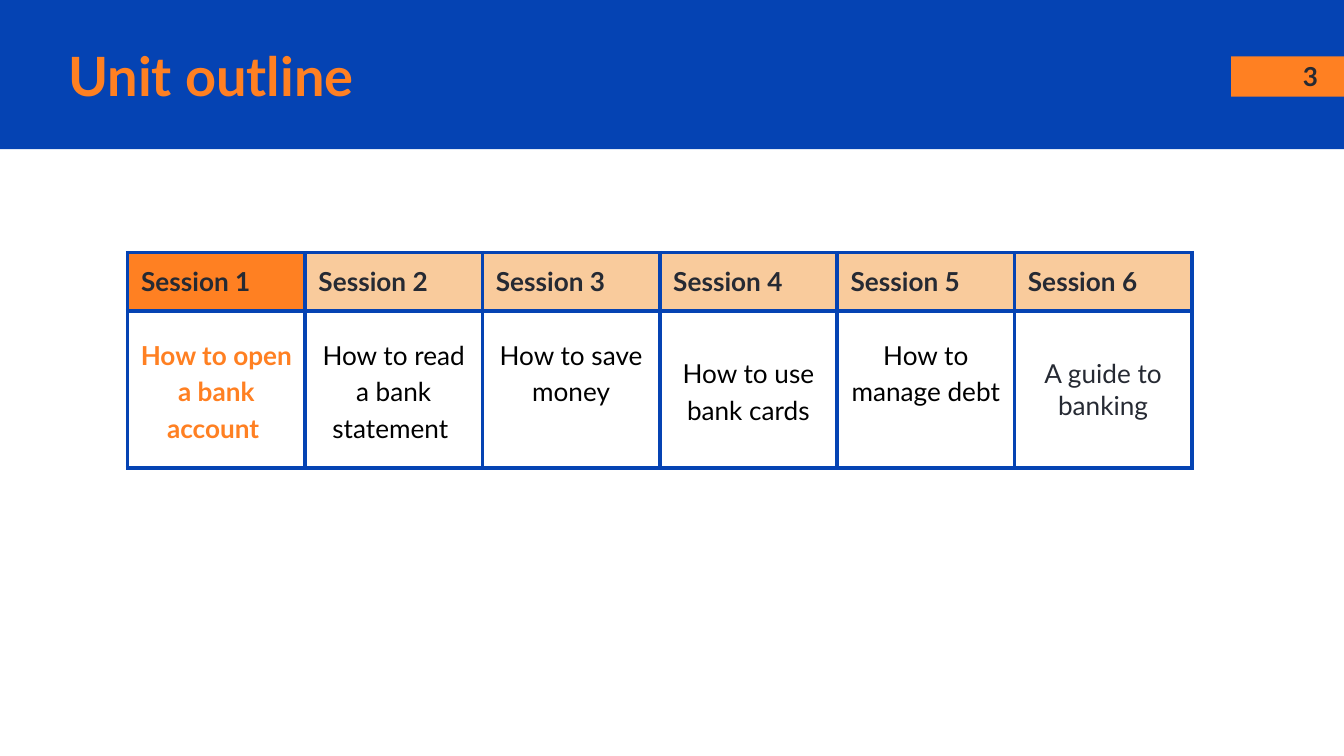
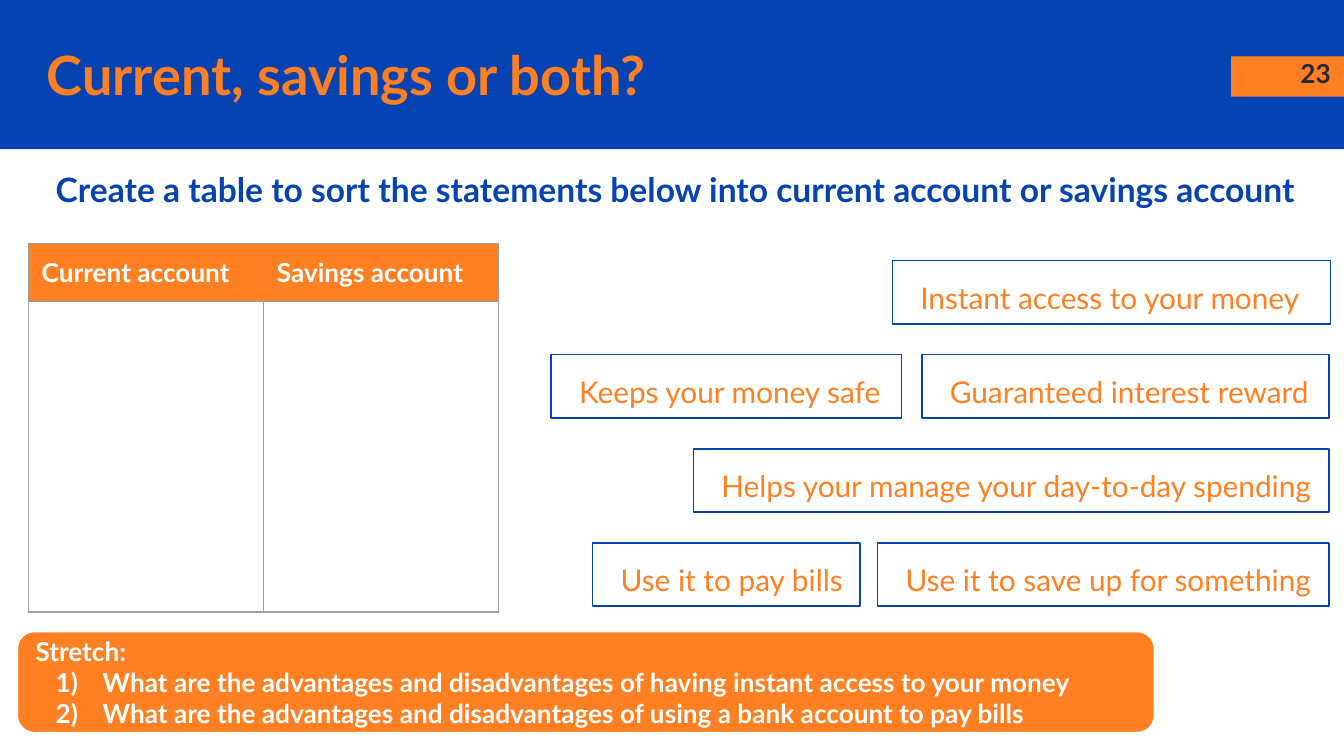
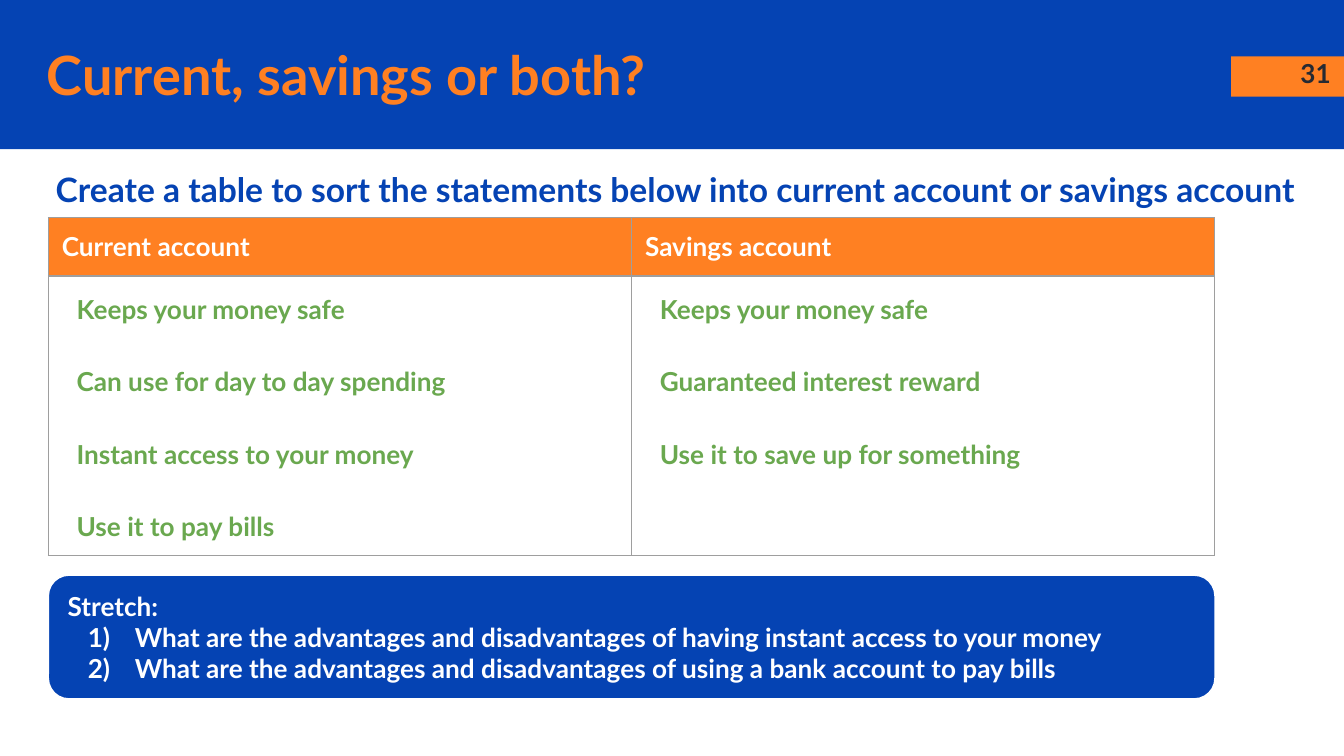
from lxml.etree import SubElement
from pptx import Presentation
from pptx.dml.color import RGBColor
from pptx.enum.shapes import MSO_SHAPE as Shape
from pptx.enum.text import MSO_ANCHOR as Anchor, PP_ALIGN as Align
from pptx.oxml.ns import qn
from pptx.util import Inches, Pt

COLORS = {
    "blue": "0543B3", "orange": "FF8022", "peach": "F9CB9C", "ink": "262A33",
    "black": "000000", "white": "FFFFFF", "gray": "9E9E9E", "green": "6AA84F",
}
FONT = "Lato"
ACCOUNTS = ["Current account", "Savings account"]
TASK = "Create a table to sort the statements below into current account or savings account"
STRETCH = [
    "Stretch:",
    "What are the advantages and disadvantages of having instant access to your money",
    "What are the advantages and disadvantages of using a bank account to pay bills",
]
SESSIONS = [
    "How to open a bank account ", "How to read a bank statement ", "How to save money",
    "How to use bank cards", "How to manage debt", "A guide to banking",
]
RAISED_SESSIONS = (2, 4)
STATEMENT_ROWS = [
    [("Instant access to your money", 6.64, 3.26)],
    [("Keeps your money safe", 4.1, 2.61), ("Guaranteed interest reward", 6.86, 3.03)],
    [("Helps your manage your day-to-day spending", 5.16, 4.73)],
    [("Use it to pay bills", 4.41, 1.99), ("Use it to save up for something", 6.53, 3.36)],
]
ANSWERS = [
    ["Keeps your money safe", "Can use for day to day spending",
     "Instant access to your money", "Use it to pay bills"],
    ["Keeps your money safe", "Guaranteed interest reward", "Use it to save up for something"],
]


def rgb(name):
    return RGBColor.from_string(COLORS[name])


def number_para(para, color):
    props = para._p.get_or_add_pPr()
    props.set("marL", str(Inches(0.5)))
    props.set("indent", str(Inches(-0.35)))
    bullet_color = SubElement(props, qn("a:buClr"))
    SubElement(bullet_color, qn("a:srgbClr"), val=COLORS[color])
    SubElement(props, qn("a:buAutoNum"), type="arabicParenR")


def write(frame, text, size=14, color="ink", bold=True, align=Align.LEFT,
          spacing=None, indent=0, gap=0, numbered=False):
    lines = [text] if isinstance(text, str) else text
    for index, line in enumerate(lines):
        para = frame.add_paragraph() if index else frame.paragraphs[0]
        if numbered and index:
            number_para(para, color)
        elif indent:
            para._p.get_or_add_pPr().set("marL", str(Inches(indent)))
        para.alignment = align
        if spacing:
            para.line_spacing = spacing
        if gap and index:
            para.space_before = Pt(gap)
        span = para.add_run()
        span.text = line
        span.font.name = FONT
        span.font.size = Pt(size)
        span.font.bold = bold
        span.font.color.rgb = rgb(color)


def set_margins(target, margin):
    target.margin_left = target.margin_right = Inches(margin)
    target.margin_top = target.margin_bottom = Inches(margin)


def prepare_frame(box, anchor):
    frame = box.text_frame
    frame.word_wrap = True
    frame.vertical_anchor = anchor
    set_margins(frame, 0.1)
    return frame


def add_text(page, place, text, anchor=Anchor.TOP, **style):
    box = page.shapes.add_textbox(*map(Inches, place))
    write(prepare_frame(box, anchor), text, **style)


def add_block(page, place, kind=Shape.RECTANGLE, fill=None, line=None,
              text=None, anchor=Anchor.TOP, **style):
    block = page.shapes.add_shape(kind, *map(Inches, place))
    block.shadow.inherit = False
    if fill:
        block.fill.solid()
        block.fill.fore_color.rgb = rgb(fill)
    else:
        block.fill.background()
    if line:
        block.line.color.rgb = rgb(line)
        block.line.width = Pt(0.75)
    else:
        block.line.fill.background()
    if text:
        write(prepare_frame(block, anchor), text, **style)


def style_cell(cell, border, width, fill=None, margin=0.1):
    props = cell._tc.get_or_add_tcPr()
    for side in ("a:lnL", "a:lnR", "a:lnT", "a:lnB"):
        edge = SubElement(props, qn(side), w=str(Pt(width)))
        paint = SubElement(edge, qn("a:solidFill"))
        SubElement(paint, qn("a:srgbClr"), val=COLORS[border])
    if fill:
        cell.fill.solid()
        cell.fill.fore_color.rgb = rgb(fill)
    else:
        cell.fill.background()
    set_margins(cell, margin)


def add_grid(page, left, top, column_width, row_heights, columns):
    width = column_width * columns
    frame = page.shapes.add_table(len(row_heights), columns, Inches(left), Inches(top),
                                  Inches(width), Inches(sum(row_heights)))
    table = frame.table
    table.first_row = table.horz_banding = False
    for column in table.columns:
        column.width = Inches(column_width)
    for row, height in zip(table.rows, row_heights):
        row.height = Inches(height)
    return table


def add_account_table(page, left, top, column_width, body_height, answers=()):
    table = add_grid(page, left, top, column_width, [0.43, body_height], len(ACCOUNTS))
    for index, account in enumerate(ACCOUNTS):
        head, body = table.cell(0, index), table.cell(1, index)
        style_cell(head, "gray", 0.75, fill="orange")
        style_cell(body, "gray", 0.75)
        write(head.text_frame, account, color="white")
        if answers:
            write(body.text_frame, answers[index], color="green",
                  spacing=1.15, indent=0.11, gap=19.3)


def add_session_table(page):
    table = add_grid(page, 0.95, 1.88, 1.32, [0.43, 1.17], len(SESSIONS))
    last = len(SESSIONS) - 1
    for index, topic in enumerate(SESSIONS):
        current = index == 0
        head, body = table.cell(0, index), table.cell(1, index)
        style_cell(head, "blue", 2.25, fill="orange" if current else "peach")
        write(head.text_frame, f"Session {index + 1}")
        style_cell(body, "blue", 2.25, margin=0.1 if index == last else 0.07)
        body.vertical_anchor = Anchor.MIDDLE
        if index in RAISED_SESSIONS:
            body.margin_bottom = Inches(0.34)
        color = "orange" if current else "ink" if index == last else "black"
        write(body.text_frame, topic, color=color, bold=current, align=Align.CENTER,
              spacing=None if index == last else 1.15)


def add_page(deck, title, title_left=0.25, title_top=0.27):
    page = deck.slides.add_slide(deck.slide_layouts[6])
    add_block(page, (0, 0, 10, 1.11), fill="blue")
    add_block(page, (9.16, 0.42, 0.84, 0.3), fill="orange")
    add_text(page, (title_left, title_top, 8.46, 0.56), title, anchor=Anchor.MIDDLE,
             size=29, color="orange")
    return page


def add_sorting_page(deck, number):
    page = add_page(deck, "Current, savings or both?")
    add_text(page, (9.4, 0.33, 0.6, 0.43), number, align=Align.RIGHT)
    add_text(page, (0.05, 1.11, 9.84, 0.5), TASK, size=18, color="blue",
             align=Align.CENTER, spacing=1.15, indent=0.11)
    return page


def add_statements(page):
    for row, statements in enumerate(STATEMENT_ROWS):
        for text, left, width in statements:
            add_block(page, (left, 1.94 + 0.7 * row, width, 0.47), line="blue", text=text,
                      size=16, color="orange", bold=False, spacing=1.15, indent=0.11)


def add_stretch(page, place, fill):
    add_block(page, place, kind=Shape.ROUNDED_RECTANGLE, fill=fill, line="white",
              text=STRETCH, anchor=Anchor.MIDDLE, color="white", numbered=True)


def main():
    deck = Presentation()
    deck.slide_width = Inches(10)
    deck.slide_height = Inches(10) * 9 // 16

    outline = add_page(deck, "Unit outline", title_left=0.41, title_top=0.28)
    add_session_table(outline)
    add_text(outline, (9.49, 0.44, 0.52, 0.25), "3", anchor=Anchor.MIDDLE, align=Align.CENTER)

    task = add_sorting_page(deck, "23")
    add_statements(task)
    add_account_table(task, 0.21, 1.81, 1.75, 2.31)
    add_stretch(task, (0.13, 4.7, 8.46, 0.75), "orange")

    solution = add_sorting_page(deck, "31")
    add_account_table(solution, 0.36, 1.62, 4.34, 2.08, ANSWERS)
    add_stretch(solution, (0.36, 4.28, 8.68, 0.92), "blue")

    deck.save("out.pptx")


if __name__ == "__main__":
    main()
